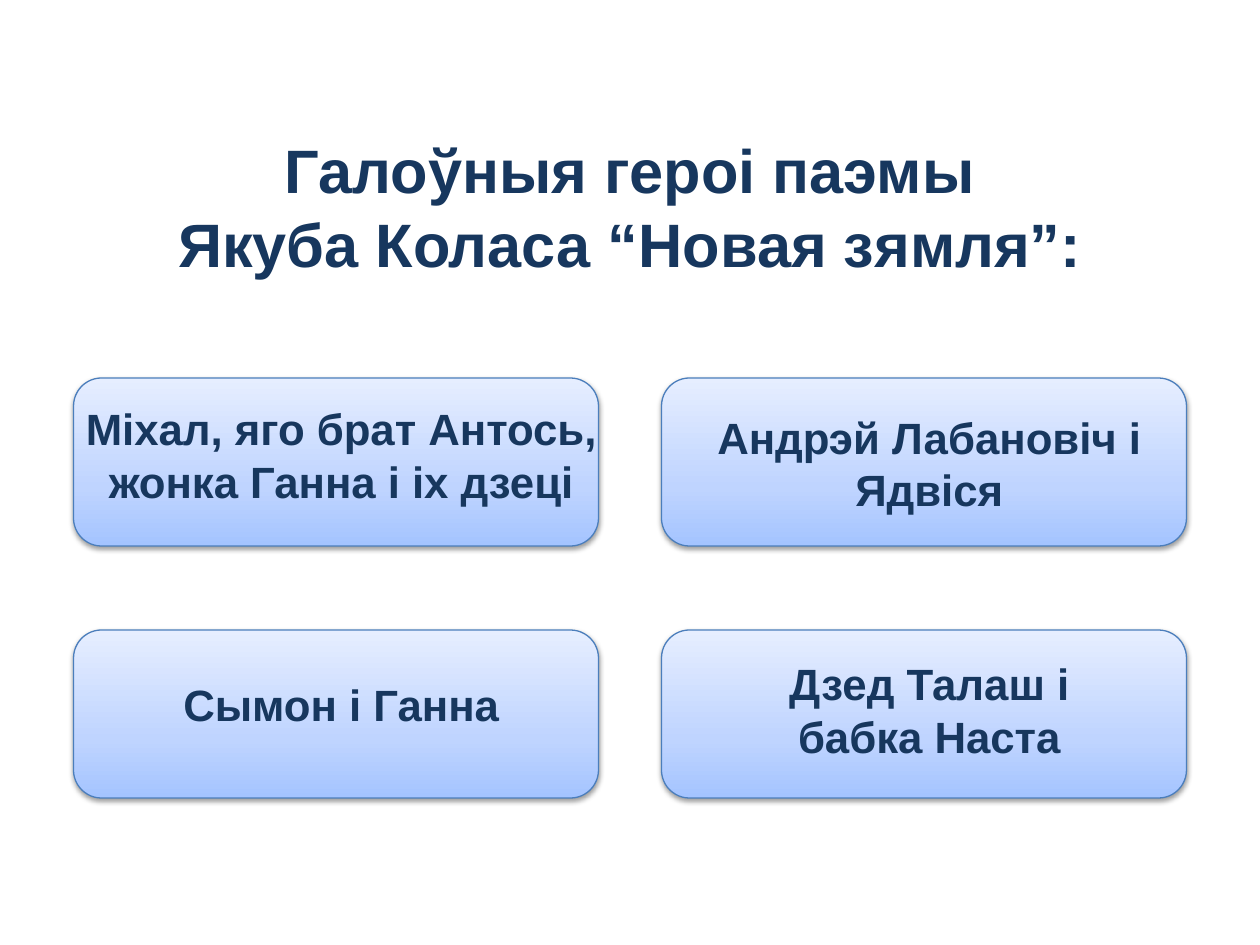
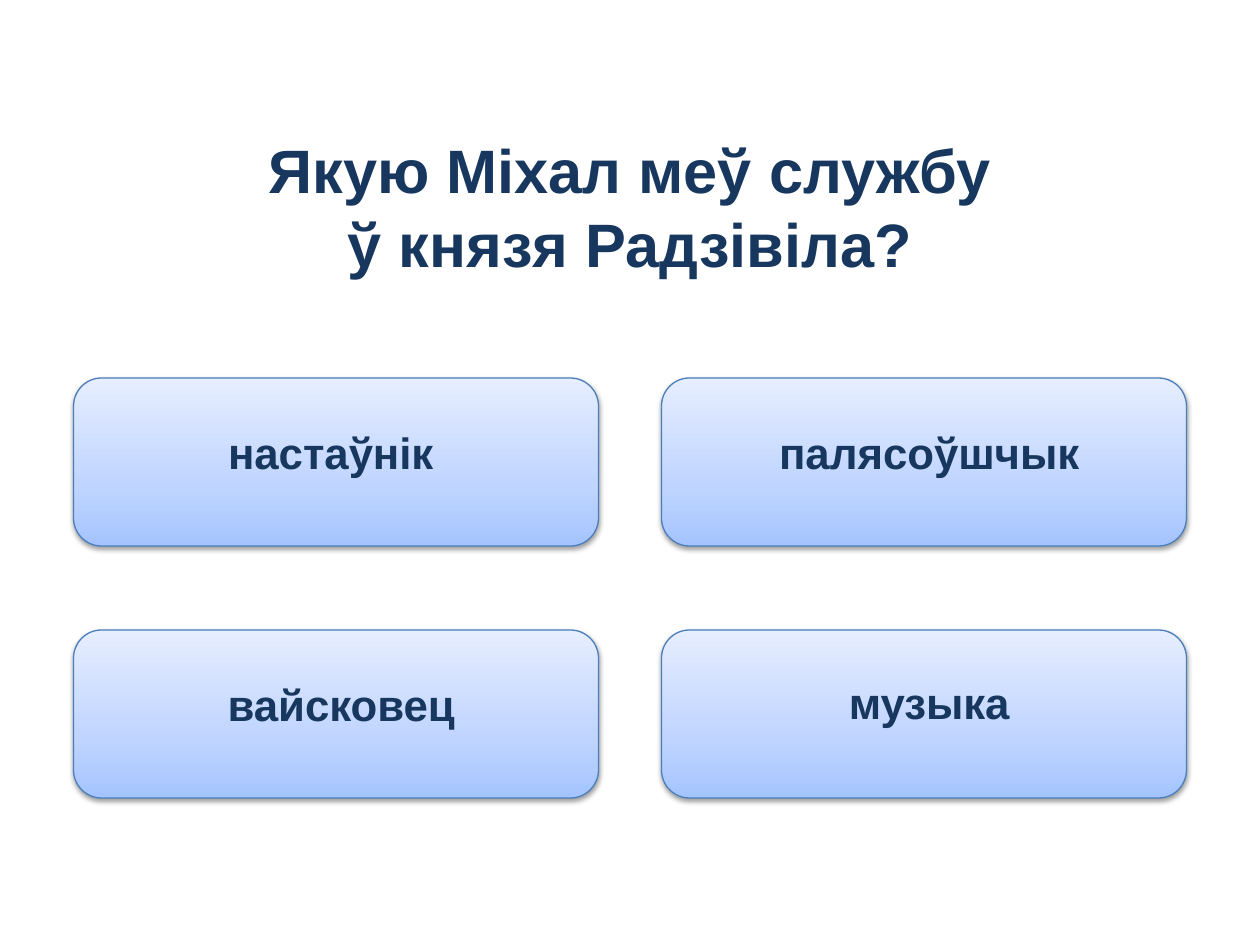
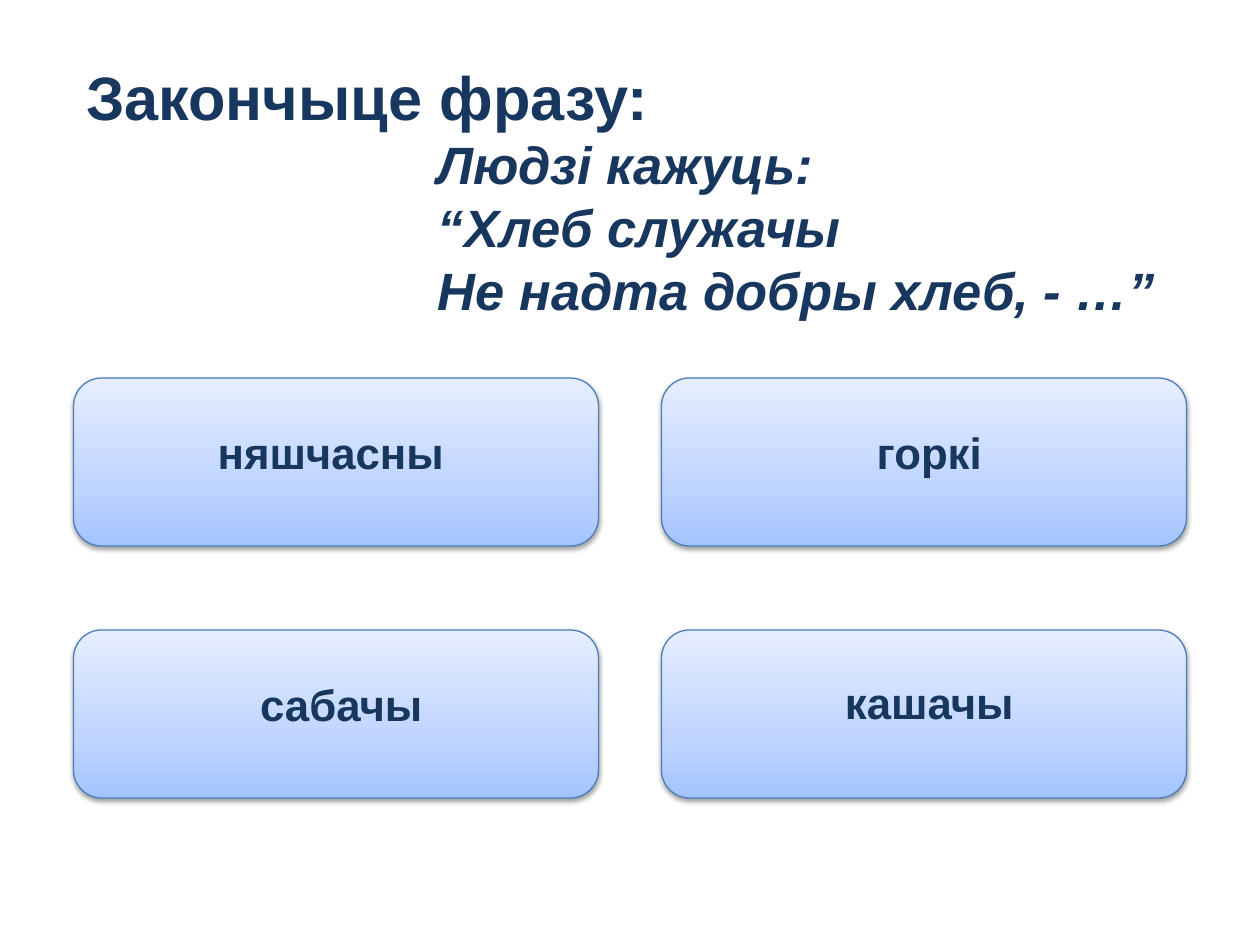
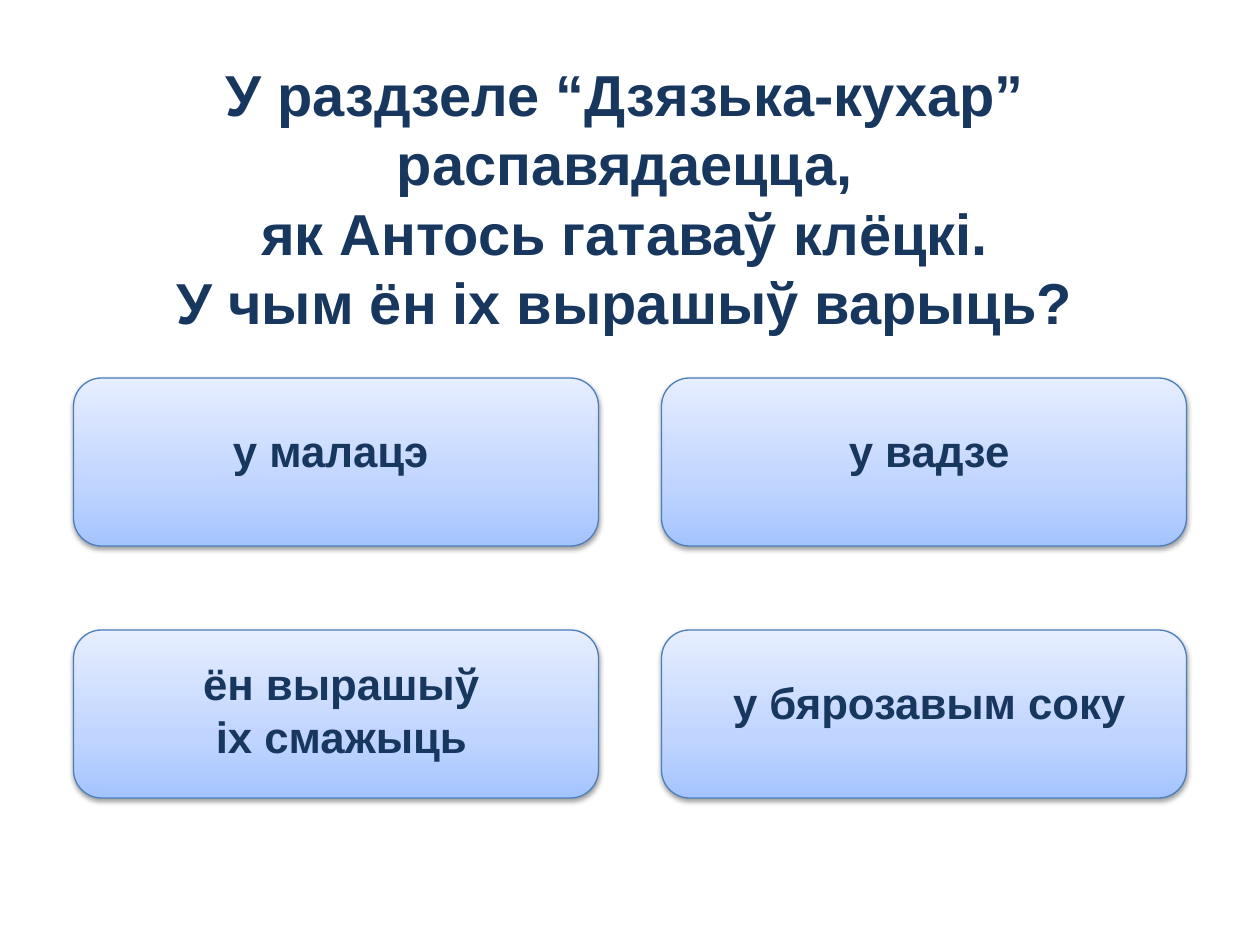
from collections import namedtuple
from copy import deepcopy

from lxml.etree import SubElement
from pptx import Presentation
from pptx.dml.color import RGBColor
from pptx.enum.shapes import MSO_SHAPE
from pptx.enum.text import MSO_ANCHOR, MSO_AUTO_SIZE, PP_ALIGN
from pptx.oxml.ns import qn
from pptx.util import Inches, Pt

COLORS = {
    "text": "17375E",
    "border": "4B7EBC",
    "shadow": "000000",
    "card_bottom": "A4C4FF",
    "card_middle": "BFD4FF",
    "card_top": "E6EEFF",
}
CARD_STOPS = [(0, "card_bottom"), (0.35, "card_middle"), (1, "card_top")]
FONT = "Arial"
TITLE_ONLY = 5
UNIT = Inches(10) // 120

Box = namedtuple("Box", "col row cols rows")
Answer = namedtuple("Answer", "lines left top height", defaults=(-1, 4, 6.2))
Question = namedtuple("Question", "box size lines answers quote", defaults=((),))

FIRST_CARD = Box(7, 36, 50, 16)
CARD_STEP = (56, 24)
LABEL_COLS = 53
TWO_LINES = 11.2
HEADING = Box(7, 12, 106, 15.4)
QUOTE_INDENT = 33.5

QUESTIONS = [
    Question(HEADING, 35, ["Галоўныя героі паэмы", "Якуба Коласа “Новая зямля”:"], [
        Answer(["Міхал, яго брат Антось, жонка Ганна і іх дзеці"], -1, 1.7, TWO_LINES),
        Answer(["Андрэй Лабановіч і Ядвіся"], -1, 2.5, TWO_LINES),
        Answer(["Сымон і Ганна"]),
        Answer(["Дзед Талаш і", "бабка Наста"], -1, 2, TWO_LINES),
    ]),
    Question(HEADING, 35, ["Якую Міхал меў службу", "ў князя Радзівіла?"], [
        Answer(["настаўнік"], -2),
        Answer(["палясоўшчык"]),
        Answer(["вайсковец"]),
        Answer(["музыка"], top=3.75),
    ]),
    Question(Box(7, 5, 107, 26.4), 35, ["Закончыце фразу:"], [
        Answer(["няшчасны"], -2),
        Answer(["горкі"]),
        Answer(["сабачы"]),
        Answer(["кашачы"], top=3.75),
    ], ["Людзі кажуць:", "“Хлеб служачы", "Не надта добры хлеб, - …”"]),
    Question(Box(7, 5, 105, 27.8), 33, [
        "У раздзеле “Дзязька-кухар” распавядаецца,",
        "як Антось гатаваў клёцкі.",
        "У чым ён іх вырашыў варыць?",
    ], [
        Answer(["у малацэ"], -2, 3.75),
        Answer(["у вадзе"], top=3.75),
        Answer(["ён вырашыў", "іх смажыць"], -1, 2, TWO_LINES),
        Answer(["у бярозавым соку"], top=3.75),
    ]),
]


def color(name):
    """Return the named palette colour."""
    return RGBColor.from_string(COLORS[name])


def emu(box):
    """Convert a box of grid units to lengths."""
    return [round(value * UNIT) for value in box]


def write_lines(frame, lines, size, align=PP_ALIGN.CENTER):
    """Fill a text frame with one styled paragraph per line."""
    frame.word_wrap = True
    frame.vertical_anchor = MSO_ANCHOR.TOP
    frame.auto_size = MSO_AUTO_SIZE.SHAPE_TO_FIT_TEXT
    frame.text = "\n".join(lines)
    for paragraph in frame.paragraphs:
        paragraph.alignment = align
        font = paragraph.font
        font.name, font.size, font.bold = FONT, Pt(size), True
        font.color.rgb = color("text")


def add_heading(slide, question):
    """Place the question in the title, with its indented quote if any."""
    title = slide.shapes.title
    title.left, title.top, title.width, title.height = emu(question.box)
    align = PP_ALIGN.LEFT if question.quote else PP_ALIGN.CENTER
    write_lines(title.text_frame, [*question.lines, *question.quote], question.size, align)
    for verse in title.text_frame.paragraphs[len(question.lines):]:
        verse.font.size, verse.font.italic = Pt(30), True
        properties = verse._p.get_or_add_pPr()
        properties.set("marL", str(round(QUOTE_INDENT * UNIT)))
        properties.set("indent", "0")


def add_shadow(card):
    """Give a card a soft shadow below it."""
    card.shadow.inherit = False
    effects = card.element.spPr.find(qn("a:effectLst"))
    shadow = SubElement(effects, qn("a:outerShdw"), blurRad=str(Pt(3.1)),
                        dist=str(Pt(1.6)), dir="5400000", rotWithShape="0")
    tint = SubElement(shadow, qn("a:srgbClr"), val=COLORS["shadow"])
    SubElement(tint, qn("a:alpha"), val="38000")


def add_card(slide, box):
    """Draw a rounded card with a vertical gradient."""
    card = slide.shapes.add_shape(MSO_SHAPE.ROUNDED_RECTANGLE, *emu(box))
    card.fill.gradient()
    card.fill.gradient_angle = 90
    stops = card.element.spPr.find(".//" + qn("a:gsLst"))
    stops.append(deepcopy(stops[0]))
    for stop, (position, name) in zip(card.fill.gradient_stops, CARD_STOPS):
        stop.position = position
        stop.color.rgb = color(name)
    card.line.color.rgb = color("border")
    card.line.width = Pt(0.75)
    add_shadow(card)


def add_answer(slide, box, answer):
    """Draw an answer card and the label over it."""
    add_card(slide, box)
    label_box = Box(box.col + answer.left, box.row + answer.top, LABEL_COLS, answer.height)
    label = slide.shapes.add_textbox(*emu(label_box))
    write_lines(label.text_frame, answer.lines, 25)


def add_question(deck, question):
    """Build a slide with a question above a two by two grid of answers."""
    slide = deck.slides.add_slide(deck.slide_layouts[TITLE_ONLY])
    add_heading(slide, question)
    for index, answer in enumerate(question.answers):
        row, col = divmod(index, 2)
        box = FIRST_CARD._replace(col=FIRST_CARD.col + col * CARD_STEP[0],
                                  row=FIRST_CARD.row + row * CARD_STEP[1])
        add_answer(slide, box, answer)


def main():
    """Build and save the quiz."""
    deck = Presentation()
    deck.slide_width, deck.slide_height = Inches(10), Inches(7.5)
    for question in QUESTIONS:
        add_question(deck, question)
    deck.save("out.pptx")


if __name__ == "__main__":
    main()
